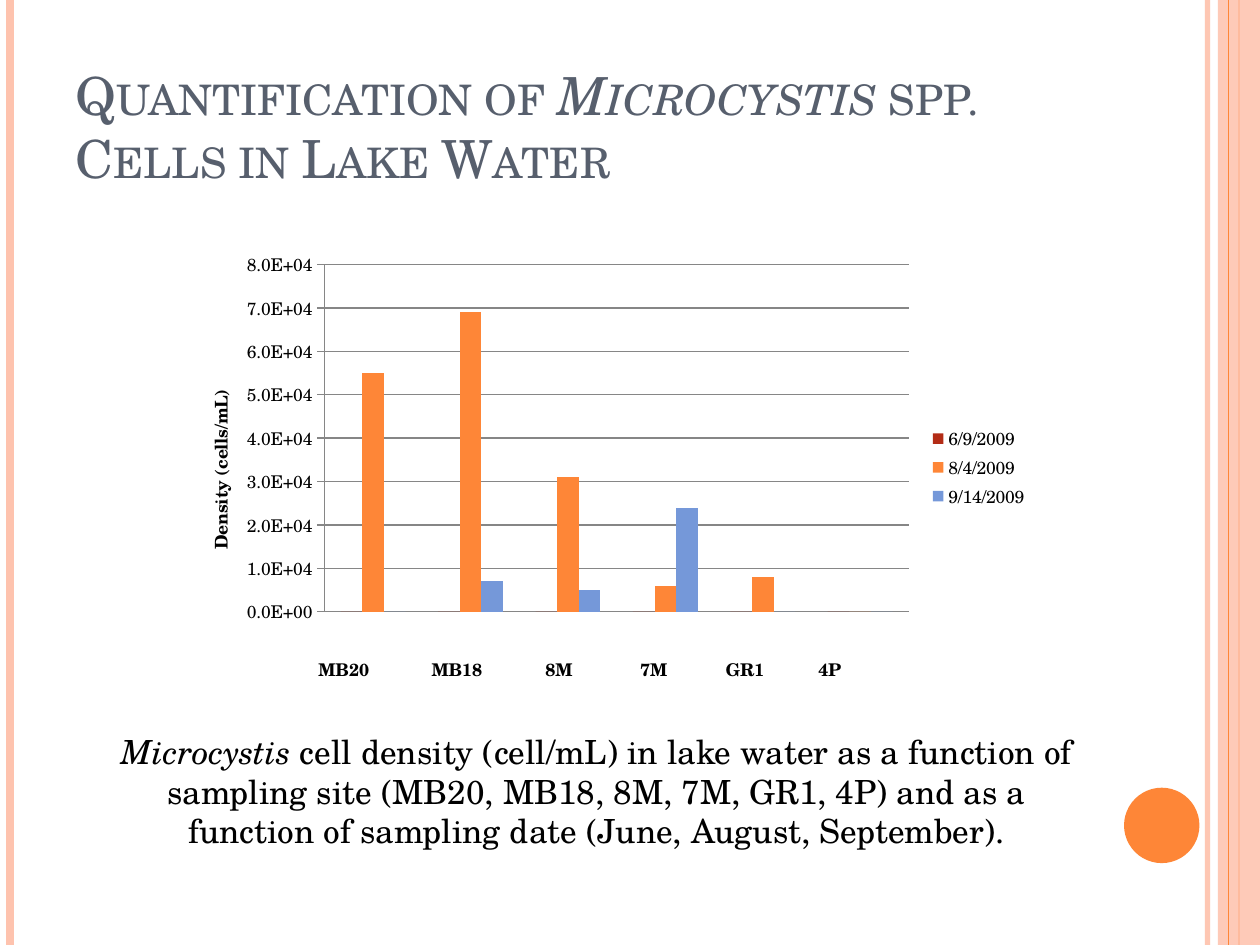
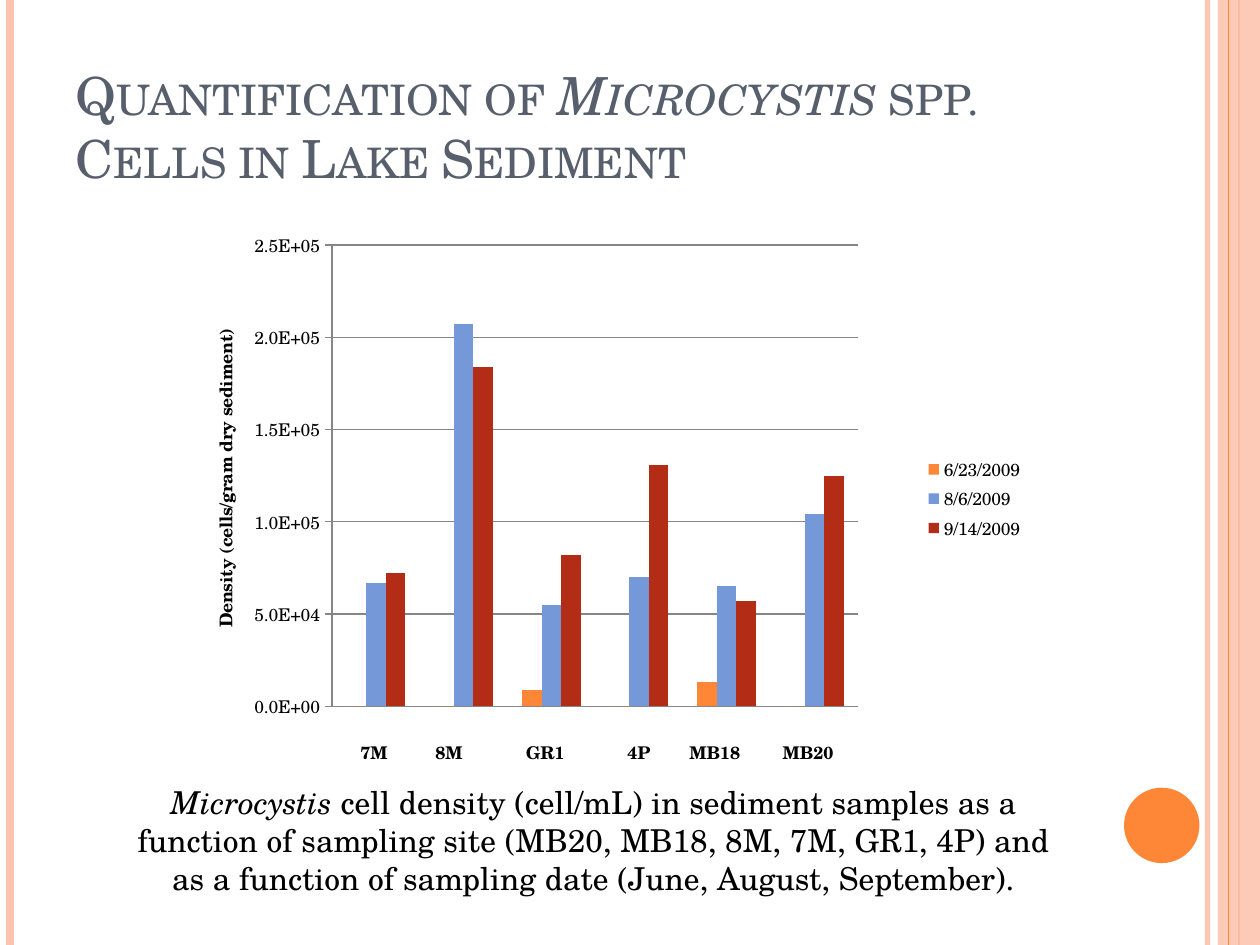
from lxml import etree
from pptx import Presentation
from pptx import util as u
from pptx.chart.data import CategoryChartData
from pptx.dml.color import RGBColor
from pptx.enum import chart as charts
from pptx.enum import shapes, text
from pptx.oxml.ns import qn

WIDTH, HEIGHT = 25.4, 19.05
FONT = "TeX Gyre Schola"
COLOURS = {
    "peach": "FEC3AE",
    "orange": "FE8637",
    "blue": "7598D9",
    "red": "B32C16",
    "slate": "575F6D",
    "black": "000000",
    "grid": "868686",
}


def colour(name):
    return RGBColor.from_string(COLOURS[name])


def set_opacity(shape, percent):
    for fill in shape._element.spPr.iter(qn("a:srgbClr")):
        etree.SubElement(fill, qn("a:alpha")).set("val", str(percent * 1000))


def add_rule(page, x, width, name, opacity=100):
    rule = page.shapes.add_connector(
        shapes.MSO_CONNECTOR.STRAIGHT, u.Cm(x), 0, u.Cm(x), u.Cm(HEIGHT))
    rule.line.width = u.Pt(width)
    rule.line.color.rgb = colour(name)
    if opacity < 100:
        set_opacity(rule, opacity)
    etree.SubElement(rule._element.spPr, qn("a:effectLst"))


def add_block(page, kind, place, name, opacity=100):
    block = page.shapes.add_shape(kind, *map(u.Cm, place))
    block.shadow.inherit = False
    block.fill.solid()
    block.fill.fore_color.rgb = colour(name)
    block.line.fill.background()
    if opacity < 100:
        set_opacity(block, opacity)


def add_frame(page):
    add_rule(page, 24.34, 3, "peach", 93)
    add_rule(page, 0.21, 4.5, "peach")
    add_rule(page, 24.98, 1.5, "orange")
    add_block(page, shapes.MSO_SHAPE.RECTANGLE, (24.55, 0, 0.85, HEIGHT), "peach", 87)
    add_rule(page, 24.77, 0.75, "orange")
    add_block(page, shapes.MSO_SHAPE.OVAL, (22.66, 15.88, 1.52, 1.52), "orange")


def add_text(page, words, place, size, name="black", italic_word=None, bold=False,
             small_caps=False, align="LEFT", anchor="TOP", before=0, indent=0):
    box = page.shapes.add_textbox(*map(u.Cm, place))
    frame = box.text_frame
    frame.word_wrap = True
    frame.vertical_anchor = text.MSO_ANCHOR[anchor]
    para = frame.paragraphs[0]
    para.alignment = text.PP_ALIGN[align]
    para.space_before = u.Pt(before)
    if indent:
        para._p.get_or_add_pPr().set("marL", str(u.Cm(indent)))
    head, found, tail = words.partition(italic_word) if italic_word else (words, "", "")
    for part, italic in ((head, False), (found, True), (tail, False)):
        if not part:
            continue
        span = para.add_run()
        span.text = part
        font = span.font
        font.name, font.size, font.bold, font.italic = FONT, u.Pt(size), bold, italic
        font.color.rgb = colour(name)
        if small_caps:
            span._r.get_or_add_rPr().set("cap", "small")


def add_title(page, words):
    add_text(page, words, (1.27, 0.76, 20.75, 3.18), 30, name="slate",
             italic_word="Microcystis", small_caps=True, anchor="BOTTOM")


def add_caption(page, words, place, size, **layout):
    add_text(page, words, place, size, italic_word="Microcystis",
             align="CENTER", **layout)


def add_site_labels(page, centres, middle):
    width, height = 2, 0.7
    for site, centre in centres.items():
        place = (centre - width / 2, middle - height / 2, width, height)
        add_text(page, site, place, 10, bold=True, align="CENTER", anchor="MIDDLE")


def set_layout(element, index, place, inner=False):
    for old in element.findall(qn("c:layout")):
        element.remove(old)
    layout = etree.Element(qn("c:layout"))
    element.insert(index, layout)
    manual = etree.SubElement(layout, qn("c:manualLayout"))
    settings = [("layoutTarget", "inner")] if inner else []
    settings += [("xMode", "edge"), ("yMode", "edge")]
    settings += zip("xywh", place)
    for tag, value in settings:
        etree.SubElement(manual, qn("c:" + tag)).set("val", str(value))


def add_density_chart(page, place, series, unit, top, step, plot_at, title_at, legend_at):
    data = CategoryChartData()
    data.categories = ["1", "2", "3", "4", "5", "6"]
    for date, (values, _) in series.items():
        data.add_series(date, values)
    chart = page.shapes.add_chart(
        charts.XL_CHART_TYPE.COLUMN_CLUSTERED, *map(u.Cm, place), data).chart
    chart.has_title = False
    chart.font.name, chart.font.size = FONT, u.Pt(10)
    chart.font.color.rgb = colour("black")

    plot = chart.plots[0]
    plot.gap_width, plot.overlap, plot.vary_by_categories = 150, 0, False
    for bars, (_, name) in zip(plot.series, series.values()):
        bars.format.fill.solid()
        bars.format.fill.fore_color.rgb = colour(name)
        bars.invert_if_negative = False

    chart.category_axis.visible = False
    axis = chart.value_axis
    axis.minimum_scale, axis.maximum_scale, axis.major_unit = 0, top, step
    axis.major_tick_mark = charts.XL_TICK_MARK.CROSS
    axis.tick_labels.number_format = "0.0E+00"
    axis.tick_labels.number_format_is_linked = False
    for line in (axis.format.line, axis.major_gridlines.format.line):
        line.width = u.Pt(0.75)
        line.color.rgb = colour("grid")

    title = axis.axis_title
    title.text_frame.text = f"Density ({unit})"
    title.text_frame._txBody.bodyPr.set("rot", "-5400000")
    title.text_frame._txBody.bodyPr.set("vert", "horz")
    font = title.text_frame.paragraphs[0].runs[0].font
    font.name, font.size, font.bold = FONT, u.Pt(10), True
    font.color.rgb = colour("black")

    chart.has_legend = True
    chart.legend.position = charts.XL_LEGEND_POSITION.RIGHT
    chart.legend.include_in_layout = False
    set_layout(chart._chartSpace.chart.plotArea, 0, plot_at, inner=True)
    set_layout(title._element, 1, title_at)
    set_layout(chart.legend._element, 1, legend_at)


def add_water_page(page):
    add_frame(page)
    add_title(page, "Quantification of Microcystis spp. Cells in Lake Water")
    add_caption(
        page,
        "Microcystis cell density (cell/mL) in lake water as a function of sampling site "
        "(MB20, MB18, 8M, 7M, GR1, 4P) and as a function of sampling date "
        "(June, August, September).",
        (1.27, 14.61, 20.75, 3.38), 19, before=9, indent=0.76)
    add_density_chart(
        page, (3.38, 4.88, 17.58, 9.09),
        {
            "6/9/2009": ([0, 0, 0, 0, 0, 0], "red"),
            "8/4/2009": ([55000, 69000, 31000, 6000, 8000, 0], "orange"),
            "9/14/2009": ([0, 7000, 5000, 24000, 0, 0], "blue"),
        },
        "cells/mL", 80000, 10000,
        plot_at=(0.18, 0.05, 0.67, 0.77), title_at=(0.04, 0.32),
        legend_at=(0.87, 0.4, 0.12, 0.2))
    add_site_labels(page, {"MB20": 6.93, "MB18": 9.21, "8M": 11.27,
                           "7M": 13.18, "GR1": 15.02, "4P": 16.73}, 13.49)


def add_sediment_page(page):
    add_frame(page)
    add_title(page, "Quantification of Microcystis spp. Cells in Lake Sediment")
    add_density_chart(
        page, (2.74, 4.24, 17.98, 11.63),
        {
            "6/23/2009": ([0, 0, 9000, 0, 13000, 0], "orange"),
            "8/6/2009": ([67000, 207000, 55000, 70000, 65000, 104000], "blue"),
            "9/14/2009": ([72000, 184000, 82000, 131000, 57000, 125000], "red"),
        },
        "cells/gram dry sediment", 250000, 50000,
        plot_at=(0.22, 0.06, 0.59, 0.8), title_at=(0.08, 0.2),
        legend_at=(0.88, 0.42, 0.12, 0.16))
    add_site_labels(page, {"7M": 7.54, "8M": 9.05, "GR1": 10.99,
                           "4P": 12.88, "MB18": 14.41, "MB20": 16.29}, 15.18)
    add_caption(
        page,
        "Microcystis cell density (cell/mL) in sediment samples as a function of sampling "
        "site (MB20, MB18, 8M, 7M, GR1, 4P) and as a function of sampling date "
        "(June, August, September).",
        (2.34, 15.67, 19.25, 2.57), 18)


def main():
    deck = Presentation()
    deck.slide_width, deck.slide_height = u.Cm(WIDTH), u.Cm(HEIGHT)
    for add_content in (add_water_page, add_sediment_page):
        add_content(deck.slides.add_slide(deck.slide_layouts[6]))
    deck.save("out.pptx")


if __name__ == "__main__":
    main()
